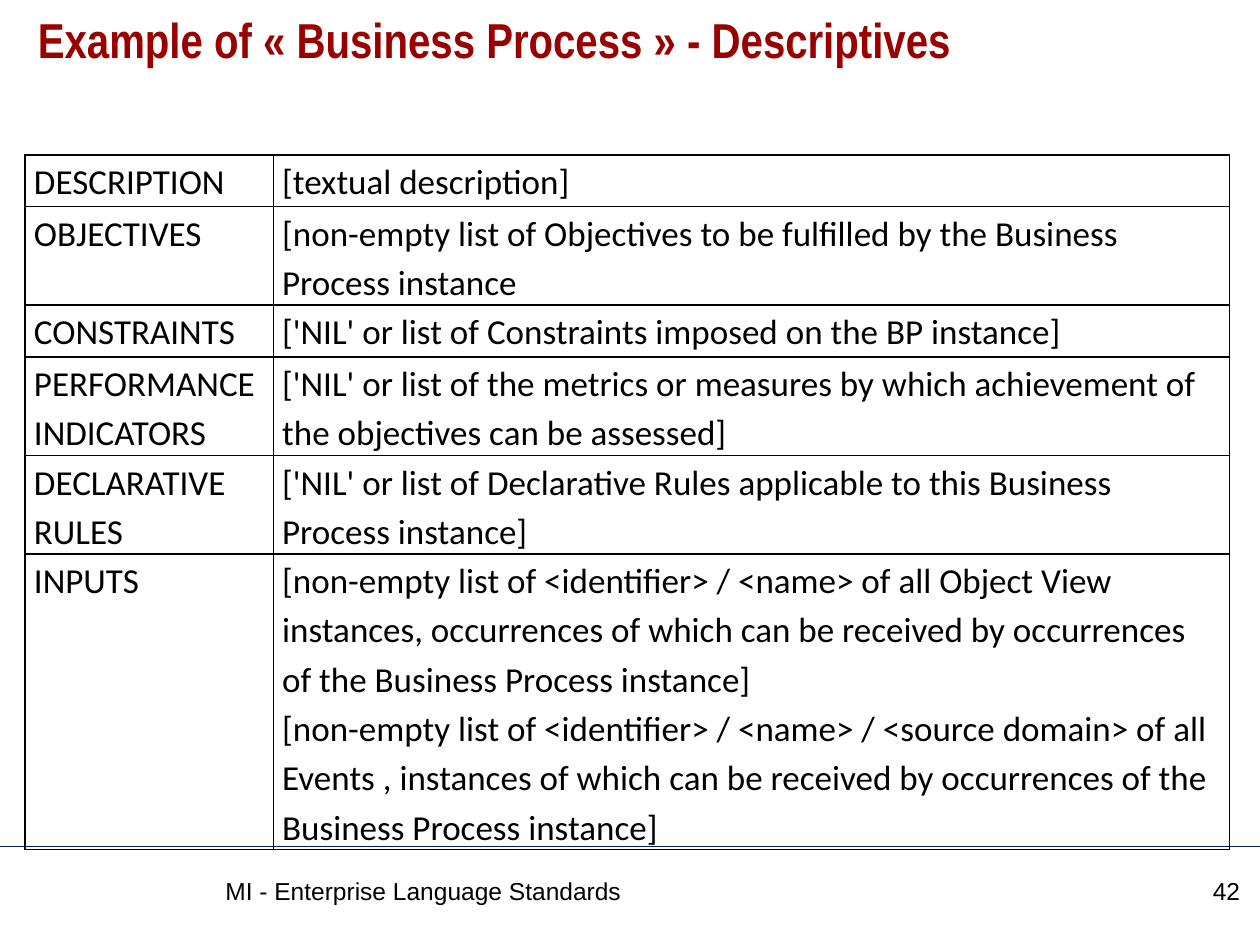
from typing import NamedTuple

from lxml import etree
from pptx import Presentation
from pptx.dml.color import RGBColor
from pptx.enum.shapes import MSO_CONNECTOR
from pptx.enum.text import MSO_ANCHOR, MSO_AUTO_SIZE, PP_ALIGN
from pptx.oxml.ns import qn
from pptx.util import Inches, Pt

TOP = MSO_ANCHOR.TOP
LEFT, RIGHT = PP_ALIGN.LEFT, PP_ALIGN.RIGHT
STRAIGHT = MSO_CONNECTOR.STRAIGHT
NO_FIT = MSO_AUTO_SIZE.NONE

BLACK, DARK_RED, NAVY = "000000", "990000", "002060"
TITLE_ONLY = 5


class Descriptive(NamedTuple):
    labels: list[str]
    values: list[str]


class FooterText(NamedTuple):
    text: str
    left: float
    width: float
    align: PP_ALIGN


DESCRIPTIVES = [
    Descriptive(["DESCRIPTION"], ["[textual description]"]),
    Descriptive(["OBJECTIVES"], [
        "[non-empty list of Objectives to be fulfilled by the Business Process instance"]),
    Descriptive(["CONSTRAINTS"], ["['NIL' or list of Constraints imposed on the BP instance]"]),
    Descriptive(["PERFORMANCE", "INDICATORS"], [
        "['NIL' or list of the metrics or measures by which achievement of "
        "the objectives can be assessed]"]),
    Descriptive(["DECLARATIVE", "RULES"], [
        "['NIL' or list of Declarative Rules applicable to this Business Process instance]"]),
    Descriptive(["INPUTS"], [
        "[non-empty list of <identifier> / <name> of all Object View instances, "
        "occurrences of which can be received by occurrences of the Business Process instance]",
        "[non-empty list of <identifier> / <name> / <source domain> of all Events , "
        "instances of which can be received by occurrences of the Business Process instance]"]),
]
FOOTERS = [
    FooterText("MI - Enterprise Language Standards", 1.69, 7.21, LEFT),
    FooterText("42", 9.02, 0.92, RIGHT),
]
COLUMN_WIDTHS = [1.97, 7.59]
ROW_HEIGHT = 0.41


def color(value: str) -> RGBColor:
    return RGBColor.from_string(value)


def write(frame, texts: list[str], font: str, size: float, ink: str = BLACK,
          bold: bool = False, align: PP_ALIGN = LEFT, spacing: float = 1.0) -> None:
    """Fill a text frame with one paragraph per text."""
    for index, text in enumerate(texts):
        para = frame.add_paragraph() if index else frame.paragraphs[0]
        para.alignment = align
        para.line_spacing = spacing
        span = para.add_run()
        span.text = text
        span.font.name = font
        span.font.size = Pt(size)
        span.font.bold = bold
        span.font.color.rgb = color(ink)


def set_borders(cell, ink: str, points: float) -> None:
    """Draw all four borders, placed before the cell's fill."""
    properties = cell._tc.get_or_add_tcPr()
    for index, side in enumerate(("lnL", "lnR", "lnT", "lnB")):
        border = etree.Element(qn(f"a:{side}"), w=str(Pt(points)))
        fill = etree.SubElement(border, qn("a:solidFill"))
        etree.SubElement(fill, qn("a:srgbClr"), val=ink)
        properties.insert(index, border)


def fill_cell(cell, texts: list[str]) -> None:
    cell.margin_left = cell.margin_right = Inches(0.07)
    cell.margin_top = cell.margin_bottom = 0
    cell.vertical_anchor = TOP
    cell.fill.background()
    set_borders(cell, BLACK, 1)
    write(cell.text_frame, texts, "Calibri", 20, spacing=1.15)


def add_rule(slide, top: float) -> None:
    rule = slide.shapes.add_connector(STRAIGHT, 0, Inches(top), Inches(10), Inches(top))
    rule.line.color.rgb = color(NAVY)
    rule.line.width = Pt(0.75)
    etree.SubElement(rule._element.spPr, qn("a:effectLst"))


def add_title(slide, text: str) -> None:
    title = slide.shapes.title
    title.left, title.top = Inches(0.2), Inches(0.08)
    title.width, title.height = Inches(9.61), Inches(0.83)
    frame = title.text_frame
    frame.word_wrap = True
    frame.auto_size = NO_FIT
    frame.vertical_anchor = TOP
    write(frame, [text], "Arial Narrow", 28, DARK_RED, bold=True, spacing=0.9)


def add_descriptives(slide, rows: list[Descriptive]) -> None:
    table = slide.shapes.add_table(
        len(rows), len(COLUMN_WIDTHS), Inches(0.2), Inches(1.23),
        Inches(sum(COLUMN_WIDTHS)), Inches(ROW_HEIGHT * len(rows))).table
    table.first_row = table.horz_banding = False
    for column, width in zip(table.columns, COLUMN_WIDTHS):
        column.width = Inches(width)
    for row_index, row in enumerate(rows):
        table.rows[row_index].height = Inches(ROW_HEIGHT)
        for column_index, texts in enumerate(row):
            fill_cell(table.cell(row_index, column_index), texts)


def add_footer(slide, footer: FooterText) -> None:
    box = slide.shapes.add_textbox(
        Inches(footer.left), Inches(6.9), Inches(footer.width), Inches(0.45))
    box.text_frame.word_wrap = True
    write(box.text_frame, [footer.text], "Arial", 14, align=footer.align)


def main() -> None:
    deck = Presentation()
    deck.slide_width, deck.slide_height = Inches(10), Inches(7.5)
    slide = deck.slides.add_slide(deck.slide_layouts[TITLE_ONLY])

    # Footer rule, behind the table
    add_rule(slide, 6.72)

    # Title and table
    add_title(slide, "Example of « Business Process » - Descriptives")
    add_descriptives(slide, DESCRIPTIVES)

    # Footer and page number
    for footer in FOOTERS:
        add_footer(slide, footer)

    deck.save("out.pptx")


if __name__ == "__main__":
    main()
